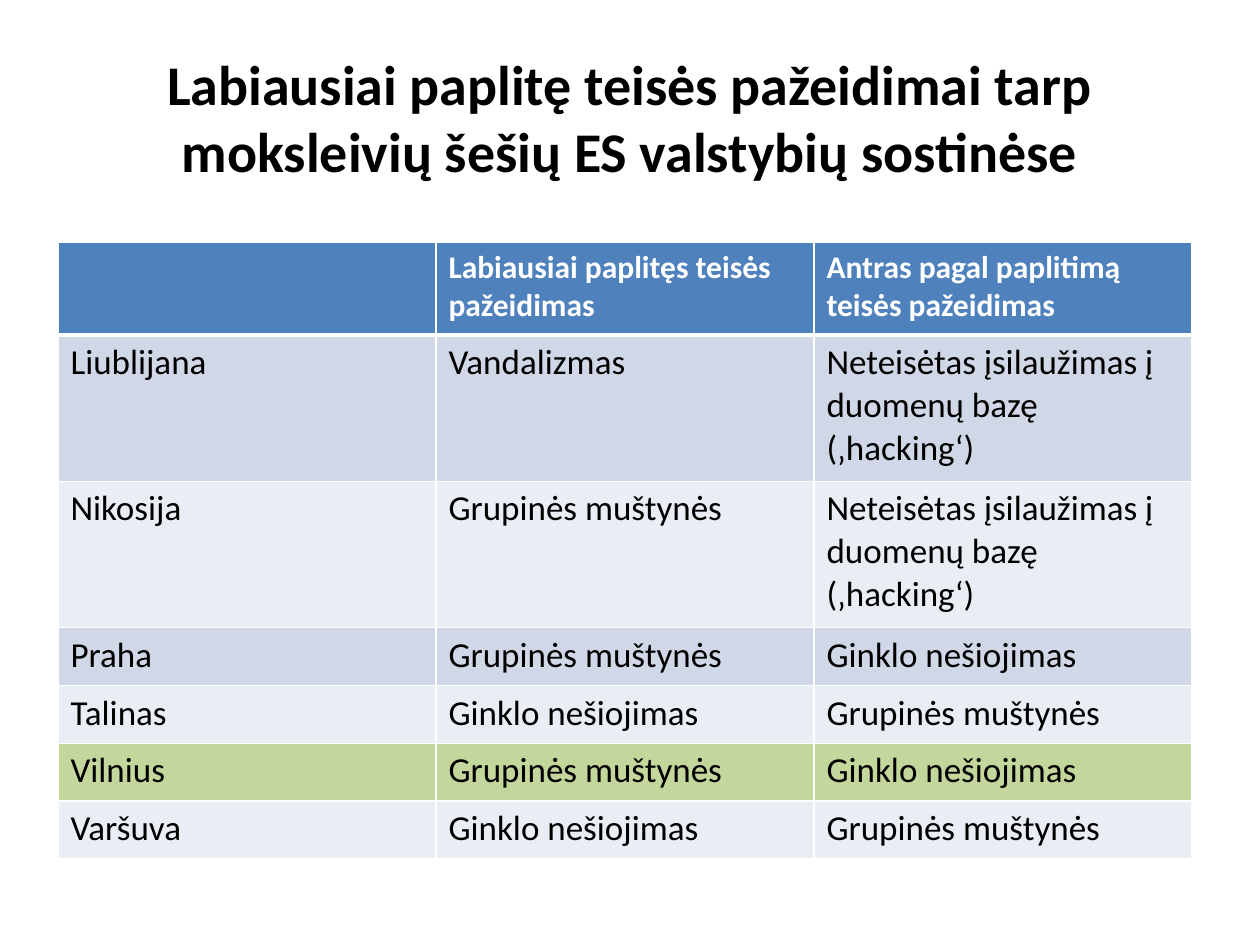
from lxml.etree import SubElement
from pptx import Presentation
from pptx.dml.color import RGBColor
from pptx.enum.text import MSO_ANCHOR, PP_ALIGN
from pptx.oxml.ns import qn
from pptx.util import Inches, Pt

TITLE = "Labiausiai paplitę teisės pažeidimai tarp moksleivių šešių ES valstybių sostinėse"
HACKING = "Neteisėtas įsilaužimas į duomenų bazę (‚hacking‘)"
FIGHTS = "Grupinės muštynės"
WEAPON = "Ginklo nešiojimas"
OFFENCES = [
    ("", "Labiausiai paplitęs teisės pažeidimas", "Antras pagal paplitimą teisės pažeidimas"),
    ("Liublijana", "Vandalizmas", HACKING),
    ("Nikosija", FIGHTS, HACKING),
    ("Praha", FIGHTS, WEAPON),
    ("Talinas", WEAPON, FIGHTS),
    ("Vilnius", FIGHTS, WEAPON),
    ("Varšuva", WEAPON, FIGHTS),
]
HIGHLIGHTED_CITY = "Vilnius"
FONT = "Calibri"
HEADER_FILL, HIGHLIGHT_FILL = "4F81BD", "C3D69B"
BAND_FILLS = ("E9EDF4", "D0D8E8")
BLACK, WHITE = "000000", "FFFFFF"
COLUMN_WIDTH = 3
HEADER_HEIGHT, TALL_HEIGHT, ROW_HEIGHT = 0.74, 1.16, 0.46


def color(hex_string):
    return RGBColor.from_string(hex_string)


def add_text(paragraph, text, size, hex_string, bold):
    run = paragraph.add_run()
    run.text = text
    run.font.name = FONT
    run.font.size = Pt(size)
    run.font.bold = bold
    run.font.color.rgb = color(hex_string)


def add_borders(cell, top, bottom):
    properties = cell._tc.get_or_add_tcPr()
    for side, points in (("L", 1), ("R", 1), ("T", top), ("B", bottom)):
        line = SubElement(properties, qn(f"a:ln{side}"), w=str(Pt(points)))
        SubElement(SubElement(line, qn("a:solidFill")), qn("a:srgbClr"), val=WHITE)


def row_height(index, row):
    if index == 0:
        return HEADER_HEIGHT
    return TALL_HEIGHT if HACKING in row else ROW_HEIGHT


def row_fill(index, row):
    if index == 0:
        return HEADER_FILL
    return HIGHLIGHT_FILL if row[0] == HIGHLIGHTED_CITY else BAND_FILLS[index % 2]


def add_title(slide):
    frame = slide.shapes.add_textbox(Inches(0.5), Inches(0.3), Inches(9), Inches(1.25)).text_frame
    frame.word_wrap = True
    frame.vertical_anchor = MSO_ANCHOR.MIDDLE
    frame.paragraphs[0].alignment = PP_ALIGN.CENTER
    add_text(frame.paragraphs[0], TITLE, 32, BLACK, True)


def add_offences(slide):
    columns = len(OFFENCES[0])
    heights = [row_height(index, row) for index, row in enumerate(OFFENCES)]
    table = slide.shapes.add_table(
        len(OFFENCES), columns, Inches(0.46), Inches(1.92),
        Inches(COLUMN_WIDTH * columns), Inches(sum(heights)),
    ).table
    for index, row in enumerate(OFFENCES):
        table.rows[index].height = Inches(heights[index])
        header = index == 0
        for column, text in enumerate(row):
            cell = table.cell(index, column)
            add_borders(cell, 3 if index == 1 else 1, 3 if header else 1)
            cell.fill.solid()
            cell.fill.fore_color.rgb = color(row_fill(index, row))
            if text:
                add_text(cell.text_frame.paragraphs[0], text,
                         18 if header else 20, WHITE if header else BLACK, header)


def main():
    presentation = Presentation()
    presentation.slide_width, presentation.slide_height = Inches(10), Inches(7.5)
    slide = presentation.slides.add_slide(presentation.slide_layouts[6])
    add_title(slide)
    add_offences(slide)
    presentation.save("out.pptx")


if __name__ == "__main__":
    main()
